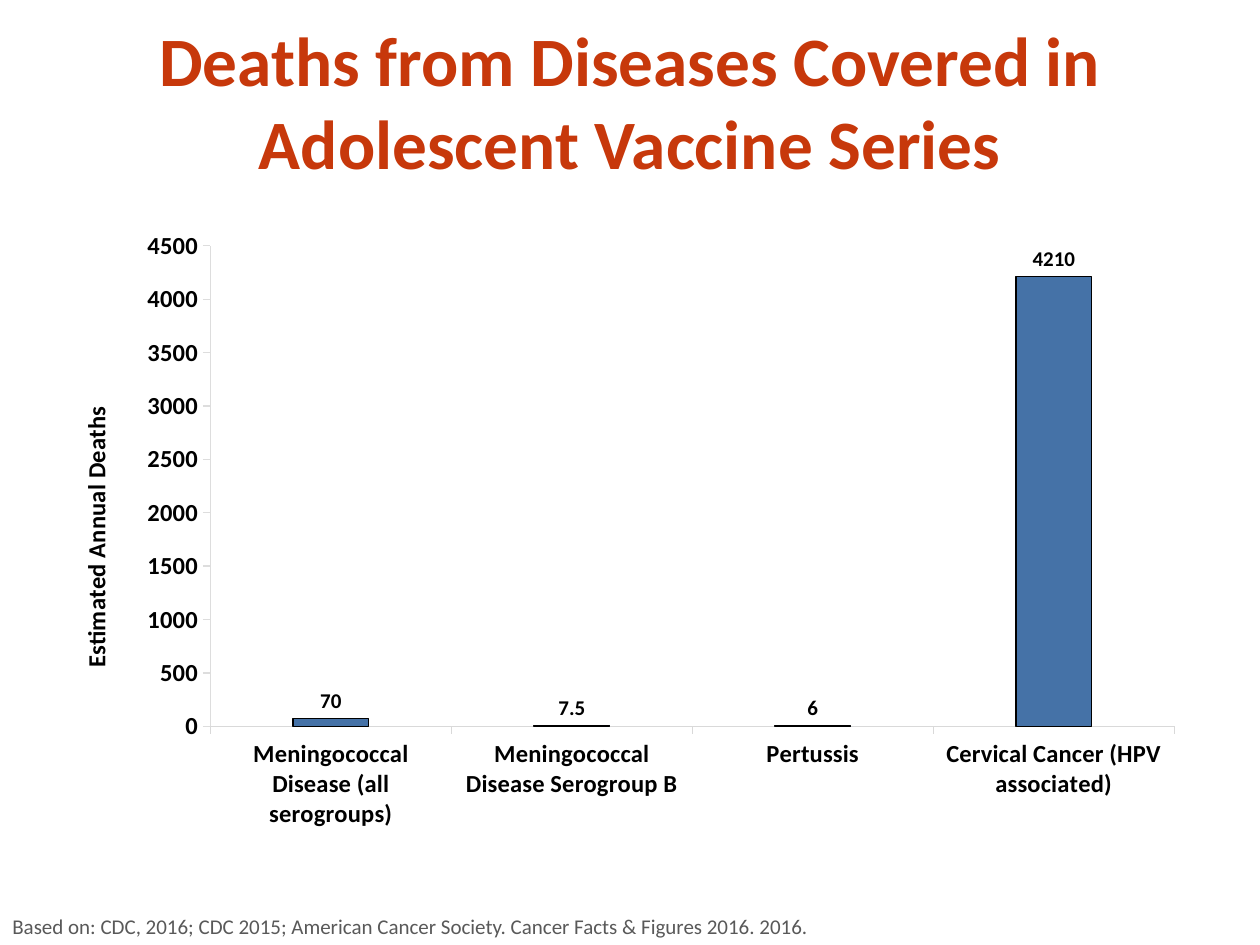
from dataclasses import dataclass

from lxml import etree
from pptx import Presentation
from pptx import util as u
from pptx.chart.data import CategoryChartData
from pptx.dml.color import RGBColor
from pptx.enum import chart as ch, text
from pptx.oxml.ns import qn

EMU_PER_PX = 914400 / 126


@dataclass(frozen=True)
class Theme:
    """Colours, type sizes and font of the slide."""
    font: str = "Calibri"
    title: str = "C7380B"
    ink: str = "000000"
    source: str = "595959"
    bar: str = "4572A7"
    cat_line: str = "D9D9D9"
    val_line: str = "DDDDDD"
    title_pt: float = 39.6
    axis_pt: int = 14
    label_pt: int = 12


THEME = Theme()
DEATHS = {
    "Meningococcal Disease (all serogroups)": 70,
    "Meningococcal Disease Serogroup B": 7.5,
    "Pertussis": 6,
    "Cervical Cancer (HPV associated)": 4210,
}


def px(n):
    """Turn pixels into EMU."""
    return u.Emu(round(n * EMU_PER_PX))


def style_font(font, size, color, bold=False):
    """Set face, size, colour and weight of a font."""
    font.name = THEME.font
    font.size = u.Pt(size)
    font.bold = bold
    font.color.rgb = RGBColor.from_string(color)


def style_line(line, color):
    """Set a thin solid line."""
    line.color.rgb = RGBColor.from_string(color)
    line.width = u.Pt(0.75)


def add_text(slide, box, words, size, color, bold=False,
             align=text.PP_ALIGN.LEFT, anchor=text.MSO_ANCHOR.TOP):
    """Add a wrapped one-paragraph text box."""
    tf = slide.shapes.add_textbox(*map(px, box)).text_frame
    tf.word_wrap = True
    tf.vertical_anchor = anchor
    p = tf.paragraphs[0]
    p.text = words
    p.alignment = align
    style_font(p.runs[0].font, size, color, bold)


def set_layout(parent, index, **fractions):
    """Place a chart part by fractions of the chart area."""
    for old in parent.findall(qn("c:layout")):
        parent.remove(old)
    layout = etree.Element(qn("c:layout"))
    manual = etree.SubElement(layout, qn("c:manualLayout"))
    if "w" in fractions:
        etree.SubElement(manual, qn("c:layoutTarget"), val="inner")
    for mode in ("xMode", "yMode"):
        etree.SubElement(manual, qn(f"c:{mode}"), val="edge")
    for key, value in fractions.items():
        etree.SubElement(manual, qn(f"c:{key}"), val=str(value))
    parent.insert(index, layout)


def style_axis(axis, line_color):
    """Give an axis bold labels, outside ticks and no gridlines."""
    axis.has_major_gridlines = False
    axis.major_tick_mark = ch.XL_TICK_MARK.OUTSIDE
    axis.minor_tick_mark = ch.XL_TICK_MARK.NONE
    style_font(axis.tick_labels.font, THEME.axis_pt, THEME.ink, True)
    style_line(axis.format.line, line_color)


def add_axis_title(axis, words):
    """Add a vertical axis title."""
    title = axis.axis_title
    tf = title.text_frame
    tf.text = words
    style_font(tf.paragraphs[0].runs[0].font, THEME.axis_pt, THEME.ink, True)
    body = title._element.find(".//" + qn("a:bodyPr"))
    body.set("rot", "-5400000")
    body.set("vert", "horz")
    set_layout(title._element, 1, x=0.01, y=0.29)


def style_series(series):
    """Colour the bars and show their values above them."""
    series.format.fill.solid()
    series.format.fill.fore_color.rgb = RGBColor.from_string(THEME.bar)
    style_line(series.format.line, THEME.ink)
    labels = series.data_labels
    labels.show_value = True
    labels.position = ch.XL_LABEL_POSITION.OUTSIDE_END
    style_font(labels.font, THEME.label_pt, THEME.ink, True)


def add_deaths_chart(slide, box):
    """Add the column chart of annual deaths."""
    data = CategoryChartData()
    data.categories = list(DEATHS)
    data.add_series("Series 1", list(DEATHS.values()))
    chart = slide.shapes.add_chart(
        ch.XL_CHART_TYPE.COLUMN_CLUSTERED, *map(px, box), data).chart
    chart.has_legend = False
    chart.has_title = False
    style_font(chart.font, 10, THEME.ink)

    style_axis(chart.category_axis, THEME.cat_line)
    val = chart.value_axis
    style_axis(val, THEME.val_line)
    val.minimum_scale, val.maximum_scale, val.major_unit = 0, 4500, 500
    add_axis_title(val, "Estimated Annual Deaths")

    plot = chart.plots[0]
    plot.gap_width = 219
    plot.overlap = -27
    plot.vary_by_categories = False
    style_series(plot.series[0])
    plot_area = chart._chartSpace.find(".//" + qn("c:plotArea"))
    set_layout(plot_area, 0, x=0.13, y=0.04, w=0.85, h=0.77)


def main():
    """Build and save the slide."""
    prs = Presentation()
    prs.slide_width, prs.slide_height = px(1260), px(945)
    slide = prs.slides.add_slide(prs.slide_layouts[6])
    add_text(slide, (63, 21, 1134, 158),
             "Deaths from Diseases Covered in Adolescent Vaccine Series",
             THEME.title_pt, THEME.title, True,
             text.PP_ALIGN.CENTER, text.MSO_ANCHOR.MIDDLE)
    add_deaths_chart(slide, (63, 221, 1134, 624))
    add_text(slide, (0, 907, 998, 38),
             "Based on: CDC, 2016; CDC 2015; American Cancer Society. "
             "Cancer Facts & Figures 2016. 2016.",
             THEME.label_pt, THEME.source)
    prs.save("out.pptx")


if __name__ == "__main__":
    main()
